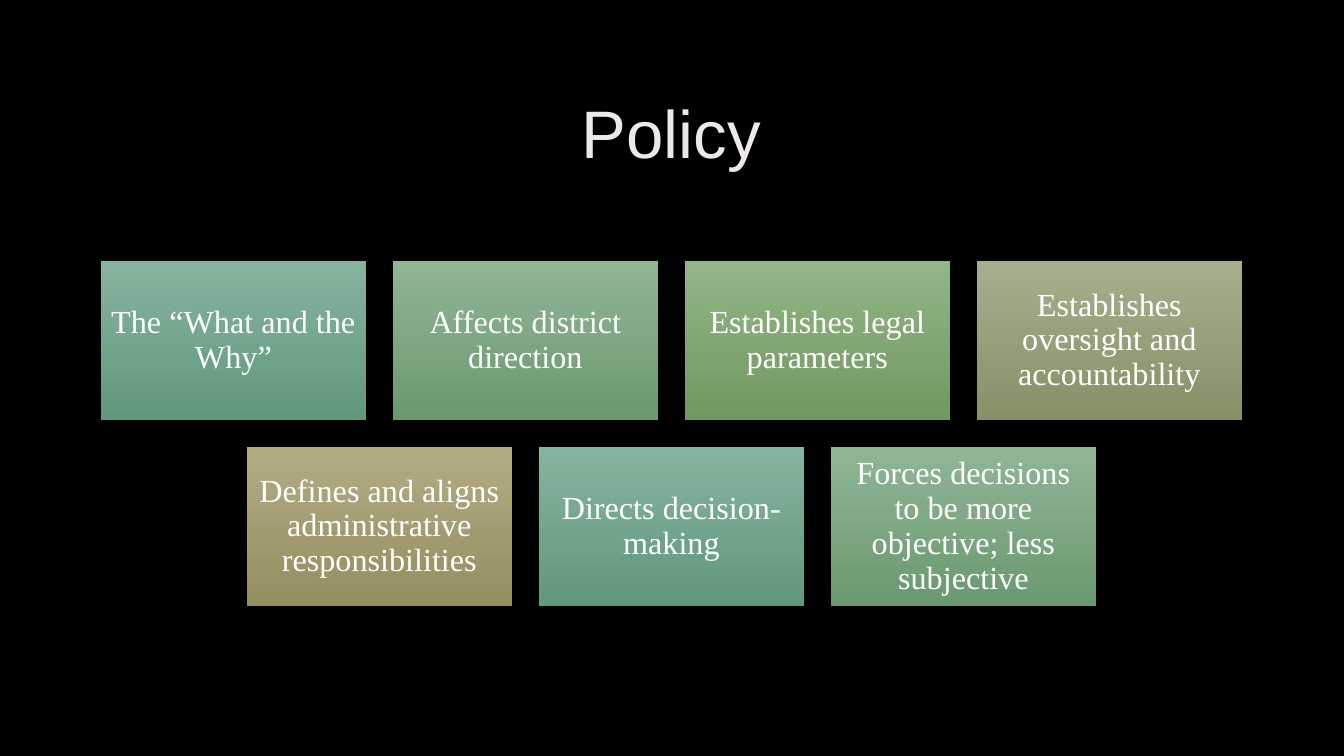
from pptx import Presentation
from pptx.dml.color import RGBColor
from pptx.enum.shapes import MSO_SHAPE
from pptx.enum.text import MSO_ANCHOR, PP_ALIGN
from pptx.util import Pt

EMU_PER_PX = 914400 / 100.8
COLORS = {
    "background": "000000",
    "title": "EEE9E9",
    "card_text": "FFFFFF",
    "teal_top": "86B49E", "teal_bottom": "61977D",
    "green_top": "91B595", "green_bottom": "6A9970",
    "leaf_top": "94B587", "leaf_bottom": "719861",
    "olive_top": "A5AF8D", "olive_bottom": "869168",
    "sand_top": "B2AC85", "sand_bottom": "958E60",
}
HUES = ["teal", "green", "leaf", "olive", "sand"]
POLICY_ROLES = [
    "The “What and the Why”",
    "Affects district direction",
    "Establishes legal parameters",
    "Establishes oversight and accountability",
    "Defines and aligns administrative responsibilities",
    "Directs decision-making",
    "Forces decisions to be more objective; less subjective",
]
COLUMNS = 4
CARD_WIDTH, CARD_HEIGHT, GAP = 265, 159, 27


def px(length):
    """Turn a length in px into EMU."""
    return round(length * EMU_PER_PX)


def color(name):
    """Look up a named colour."""
    return RGBColor.from_string(COLORS[name])


def write_centred(frame, text, font_name, size, color_name):
    """Fill a frame with one centred paragraph."""
    frame.word_wrap = True
    frame.vertical_anchor = MSO_ANCHOR.MIDDLE
    frame.margin_left = frame.margin_right = px(10)
    frame.margin_top = frame.margin_bottom = px(10)
    frame.text = text
    paragraph = frame.paragraphs[0]
    paragraph.alignment = PP_ALIGN.CENTER
    paragraph.line_spacing = 0.9
    font = paragraph.runs[0].font
    font.name = font_name
    font.size = Pt(size)
    font.color.rgb = color(color_name)


def add_title(slide, left, top, width, height):
    """Place the slide title in its box."""
    title = slide.shapes.add_textbox(px(left), px(top), px(width), px(height))
    write_centred(title.text_frame, "Policy", "Arial", 48, "title")


def add_card(slide, left, top, role, hue):
    """Place one gradient card with its policy role."""
    card = slide.shapes.add_shape(
        MSO_SHAPE.RECTANGLE, px(left), px(top), px(CARD_WIDTH), px(CARD_HEIGHT))
    card.shadow.inherit = False
    card.line.fill.background()
    card.fill.gradient()
    card.fill.gradient_angle = 270
    for stop, position, edge in zip(card.fill.gradient_stops, (0, 1), ("top", "bottom")):
        stop.position = position
        stop.color.rgb = color(f"{hue}_{edge}")
    write_centred(card.text_frame, role, "Times New Roman", 23, "card_text")


def add_cards(slide, left, top, width):
    """Lay the cards out in rows, each centred in the given width."""
    for start in range(0, len(POLICY_ROLES), COLUMNS):
        row = POLICY_ROLES[start:start + COLUMNS]
        row_width = len(row) * (CARD_WIDTH + GAP) - GAP
        row_left = left + (width - row_width) // 2
        row_top = top + start // COLUMNS * (CARD_HEIGHT + GAP)
        for column, role in enumerate(row):
            hue = HUES[(start + column) % len(HUES)]
            add_card(slide, row_left + column * (CARD_WIDTH + GAP), row_top, role, hue)


def main():
    """Build the policy slide and save it."""
    deck = Presentation()
    deck.slide_width, deck.slide_height = px(1344), px(756)
    slide = deck.slides.add_slide(deck.slide_layouts[6])
    slide.background.fill.solid()
    slide.background.fill.fore_color.rgb = color("background")
    add_title(slide, 101, 67, 1141, 139)
    add_cards(slide, 101, 261, 1141)
    deck.save("out.pptx")


if __name__ == "__main__":
    main()
